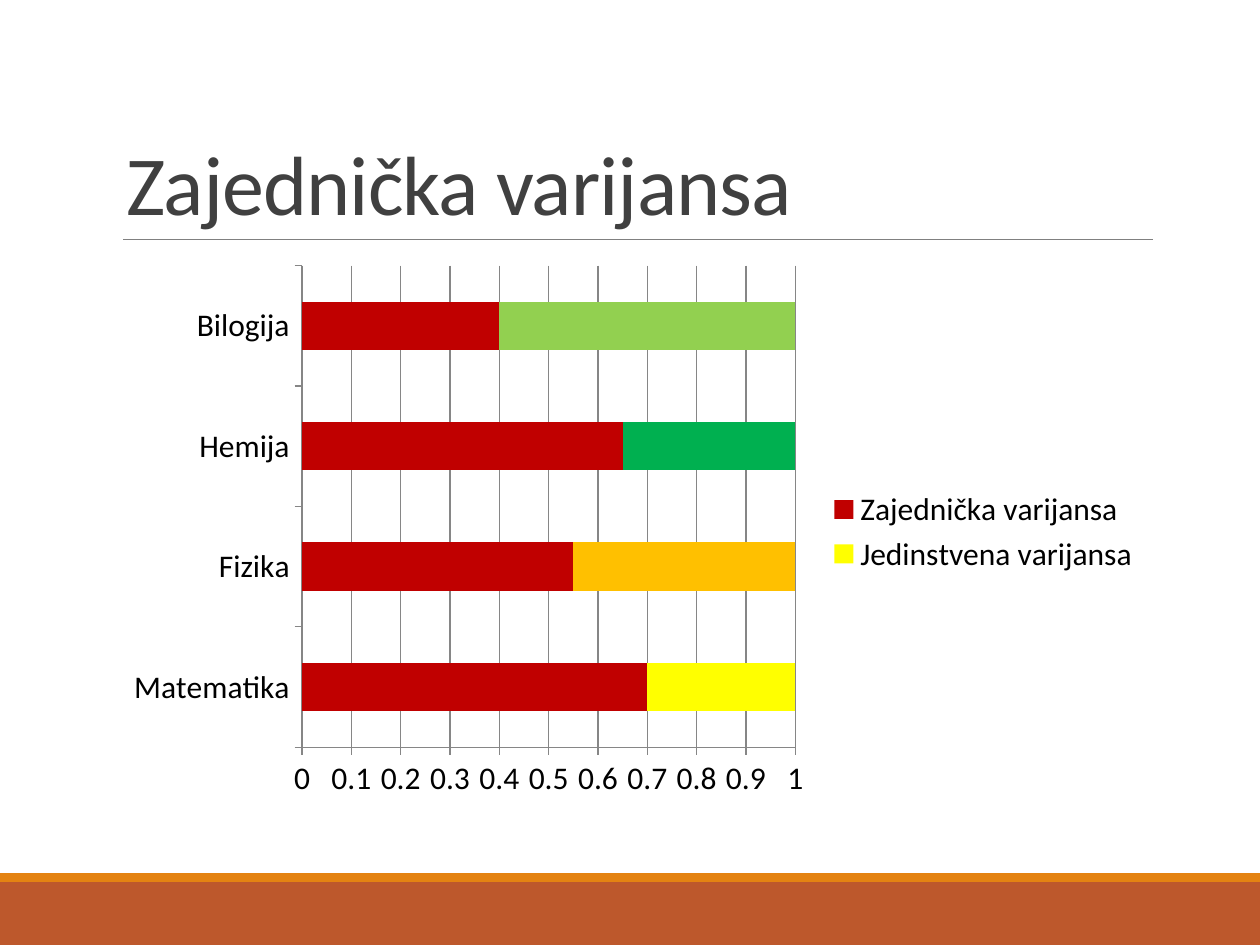
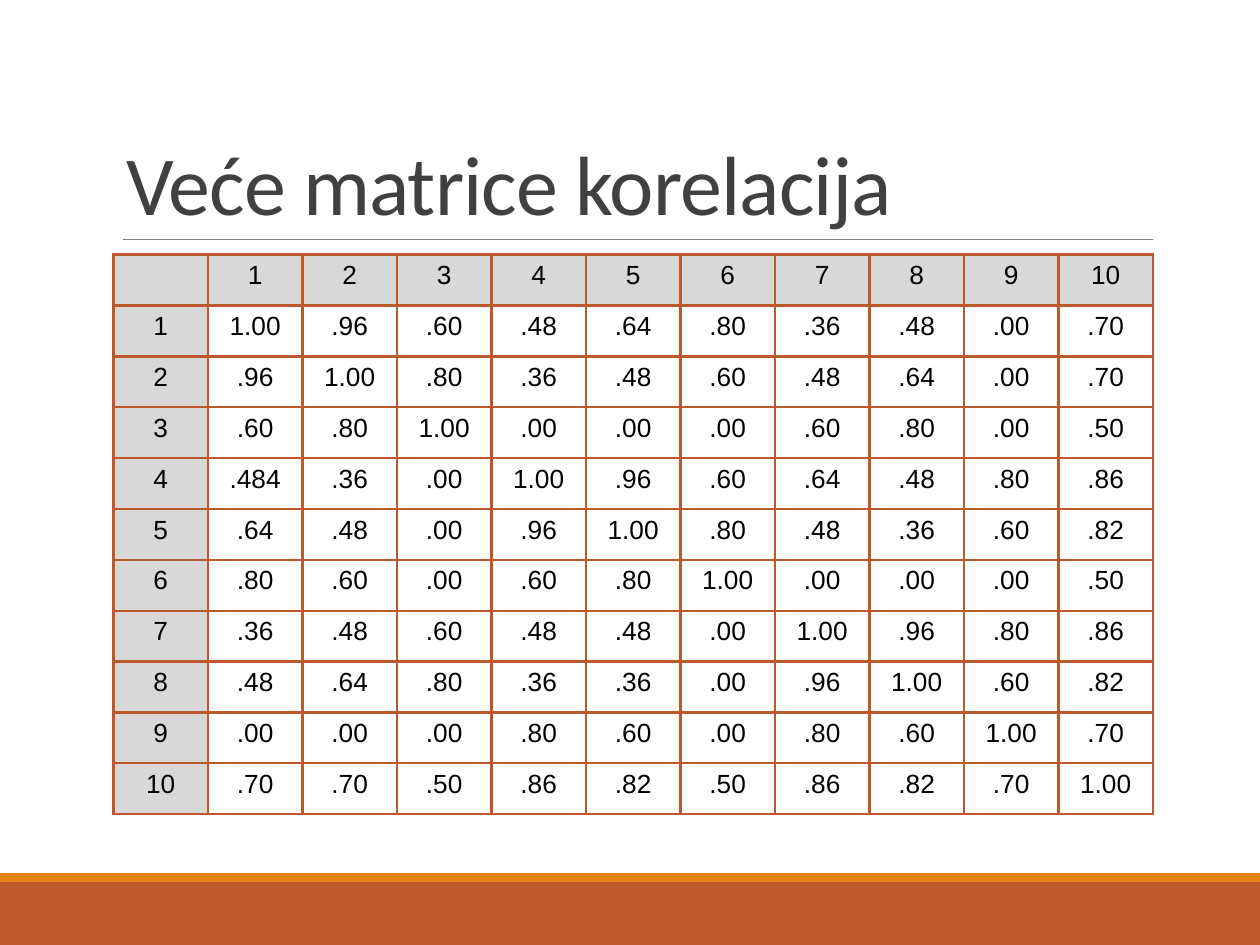
from lxml import etree
from pptx import Presentation
from pptx import util as u
from pptx.chart import data as chart_data
from pptx.dml.color import RGBColor
from pptx.enum import chart as charts
from pptx.enum import shapes, text
from pptx.oxml.ns import qn

RUST, ORANGE, GREY = "BD582C", "E48312", "808080"
INK, BLACK, HEADER, GRID = "404040", "000000", "B2B2B2", "868686"
LEFT, WIDTH = 0.9, 8.25
CONTENT_TOP = 2.02

SUBJECTS = ["Matematika", "Fizika", "Hemija", "Bilogija"]
SHARED_VARIANCE = [70, 55, 65, 40]
UNIQUE_COLORS = ["FFFF00", "FFC000", "00B050", "92D050"]

CORRELATIONS = """
1.00 .96 .60 .48 .64 .80 .36 .48 .00 .70
.96 1.00 .80 .36 .48 .60 .48 .64 .00 .70
.60 .80 1.00 .00 .00 .00 .60 .80 .00 .50
.484 .36 .00 1.00 .96 .60 .64 .48 .80 .86
.64 .48 .00 .96 1.00 .80 .48 .36 .60 .82
.80 .60 .00 .60 .80 1.00 .00 .00 .00 .50
.36 .48 .60 .48 .48 .00 1.00 .96 .80 .86
.48 .64 .80 .36 .36 .00 .96 1.00 .60 .82
.00 .00 .00 .80 .60 .00 .80 .60 1.00 .70
.70 .70 .50 .86 .82 .50 .86 .82 .70 1.00
"""


def color(hex_code):
    return RGBColor.from_string(hex_code)


def inches(*lengths):
    return [u.Inches(length) for length in lengths]


def paint(fill, hex_code):
    fill.solid()
    fill.fore_color.rgb = color(hex_code)


def style_font(font, name, size, hex_code):
    font.name, font.size = name, u.Pt(size)
    font.color.rgb = color(hex_code)


class Deck:
    """Holds the presentation, its style and the current page."""

    def __init__(self):
        self.presentation = Presentation()
        self.presentation.slide_width, self.presentation.slide_height = inches(10, 7.5)
        self.page = None

    def add_page(self, title):
        layout = self.presentation.slide_layouts.get_by_name("Title Only")
        self.page = self.presentation.slides.add_slide(layout)
        self.band(7, 0.5, RUST)
        self.band(6.93, 0.07, ORANGE)
        self.rule(0.98, LEFT + WIDTH, 1.9)
        self.title(title)

    def band(self, top, height, hex_code):
        box = self.page.shapes.add_shape(
            shapes.MSO_SHAPE.RECTANGLE, *inches(0, top, 10, height))
        box.shadow.inherit = False
        paint(box.fill, hex_code)
        box.line.fill.background()

    def rule(self, start, end, top):
        line = self.page.shapes.add_connector(
            shapes.MSO_CONNECTOR.STRAIGHT, *inches(start, top, end, top))
        line.line.color.rgb = color(GREY)
        line.line.width = u.Pt(0.5)
        etree.SubElement(line.element.spPr, qn("a:effectLst"))

    def title(self, wording):
        box = self.page.shapes.title
        box.left, box.top, box.width, box.height = inches(LEFT, 0.31, WIDTH, 1.59)
        frame = box.text_frame
        frame.text = wording
        frame.auto_size = text.MSO_AUTO_SIZE.NONE
        frame.vertical_anchor = text.MSO_ANCHOR.BOTTOM
        para = frame.paragraphs[0]
        para.alignment = text.PP_ALIGN.LEFT
        para.line_spacing = 0.85
        span = para.runs[0]
        style_font(span.font, "Calibri", 48, INK)
        span.font._element.set("spc", "-50")

    def variance_chart(self):
        data = chart_data.CategoryChartData()
        data.categories = SUBJECTS
        data.add_series("Zajednička varijansa", SHARED_VARIANCE)
        data.add_series("Jedinstvena varijansa", [100 - share for share in SHARED_VARIANCE])
        chart = self.page.shapes.add_chart(
            charts.XL_CHART_TYPE.BAR_STACKED_100,
            *inches(LEFT, CONTENT_TOP, WIDTH, 4.4), data).chart
        chart.has_title = False
        style_font(chart.font, "Calibri", 18, BLACK)
        chart.has_legend = True
        chart.legend.position = charts.XL_LEGEND_POSITION.RIGHT
        chart.legend.include_in_layout = False

        plot = chart.plots[0]
        plot.gap_width, plot.overlap, plot.vary_by_categories = 150, 100, False
        shared, unique = plot.series
        paint(shared.format.fill, "C00000")
        paint(unique.format.fill, UNIQUE_COLORS[0])
        for index, hex_code in enumerate(UNIQUE_COLORS[1:], 1):
            paint(unique.points[index].format.fill, hex_code)

        values = chart.value_axis
        values.has_major_gridlines = True
        values.tick_labels.number_format = "General"
        values.tick_labels.number_format_is_linked = False
        for axis in (values, chart.category_axis):
            axis.major_tick_mark = charts.XL_TICK_MARK.OUTSIDE
        for part in (values, chart.category_axis, values.major_gridlines):
            part.format.line.color.rgb = color(GRID)
            part.format.line.width = u.Pt(0.75)

    def correlation_table(self):
        matrix = [line.split() for line in CORRELATIONS.strip().splitlines()]
        numbers = [str(number) for number in range(1, len(matrix) + 1)]
        rows = [["", *numbers]] + [[number, *line] for number, line in zip(numbers, matrix)]
        count = len(rows)
        table = self.page.shapes.add_table(
            count, count, *inches(LEFT, CONTENT_TOP, WIDTH, 4.44)).table
        table.first_row = table.horz_banding = False
        for row_index, row in enumerate(rows):
            for column_index, wording in enumerate(row):
                self.cell(table.cell(row_index, column_index), wording,
                          is_header=row_index == 0 or column_index == 0)

    def cell(self, cell, wording, is_header):
        properties = cell._tc.get_or_add_tcPr()
        for side in ("lnL", "lnR", "lnT", "lnB"):
            border = etree.SubElement(properties, qn(f"a:{side}"), w=str(u.Pt(1.5)))
            fill = etree.SubElement(border, qn("a:solidFill"))
            etree.SubElement(fill, qn("a:srgbClr"), val=RUST)
        if is_header:
            paint(cell.fill, HEADER)
            shade = properties.find(f"{qn('a:solidFill')}/{qn('a:srgbClr')}")
            etree.SubElement(shade, qn("a:alpha"), val="50000")
        else:
            cell.fill.background()
        if not wording:
            return
        cell.text_frame.text = wording
        para = cell.text_frame.paragraphs[0]
        para.alignment = text.PP_ALIGN.CENTER
        space = etree.SubElement(para._p.get_or_add_pPr(), qn("a:spcBef"))
        etree.SubElement(space, qn("a:spcPct"), val="20000")
        style_font(para.runs[0].font, "Arial", 15, BLACK)


def main():
    deck = Deck()
    deck.add_page("Zajednička varijansa")
    deck.variance_chart()
    deck.add_page("Veće matrice korelacija")
    deck.correlation_table()
    deck.presentation.save("out.pptx")


if __name__ == "__main__":
    main()
